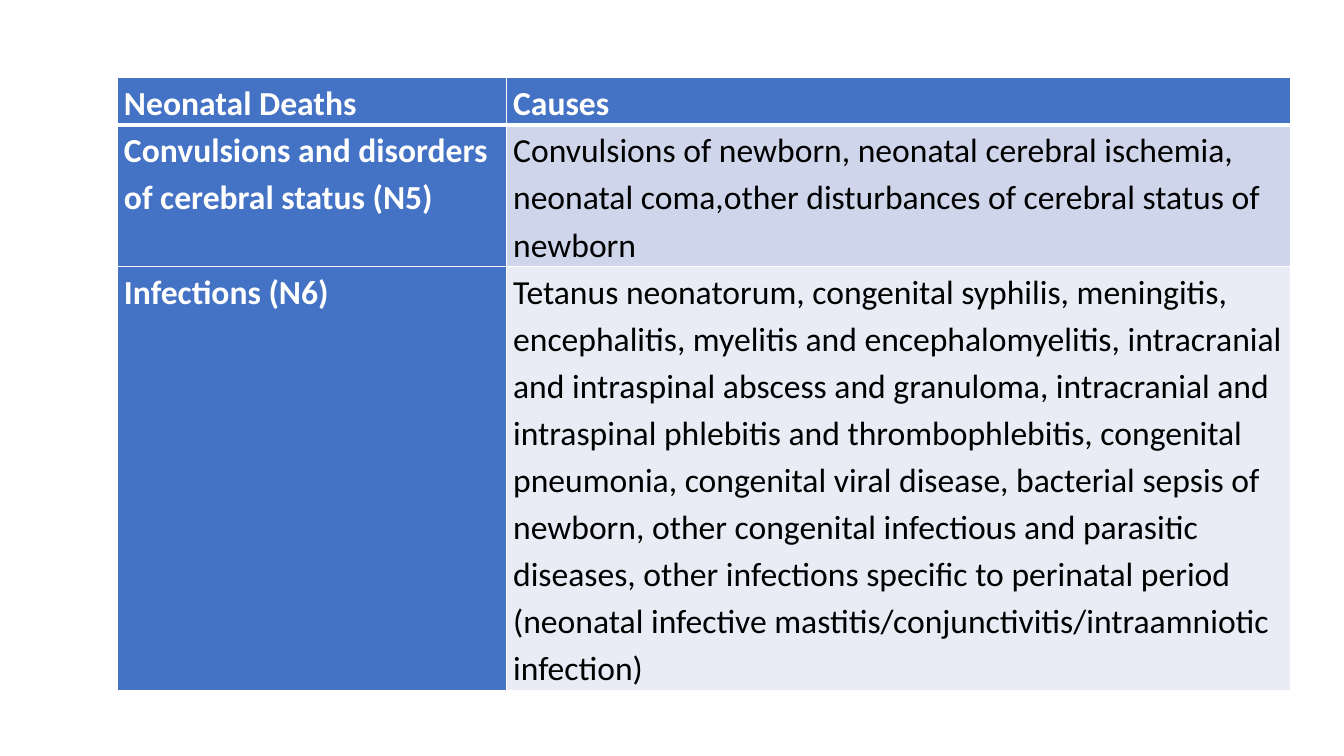
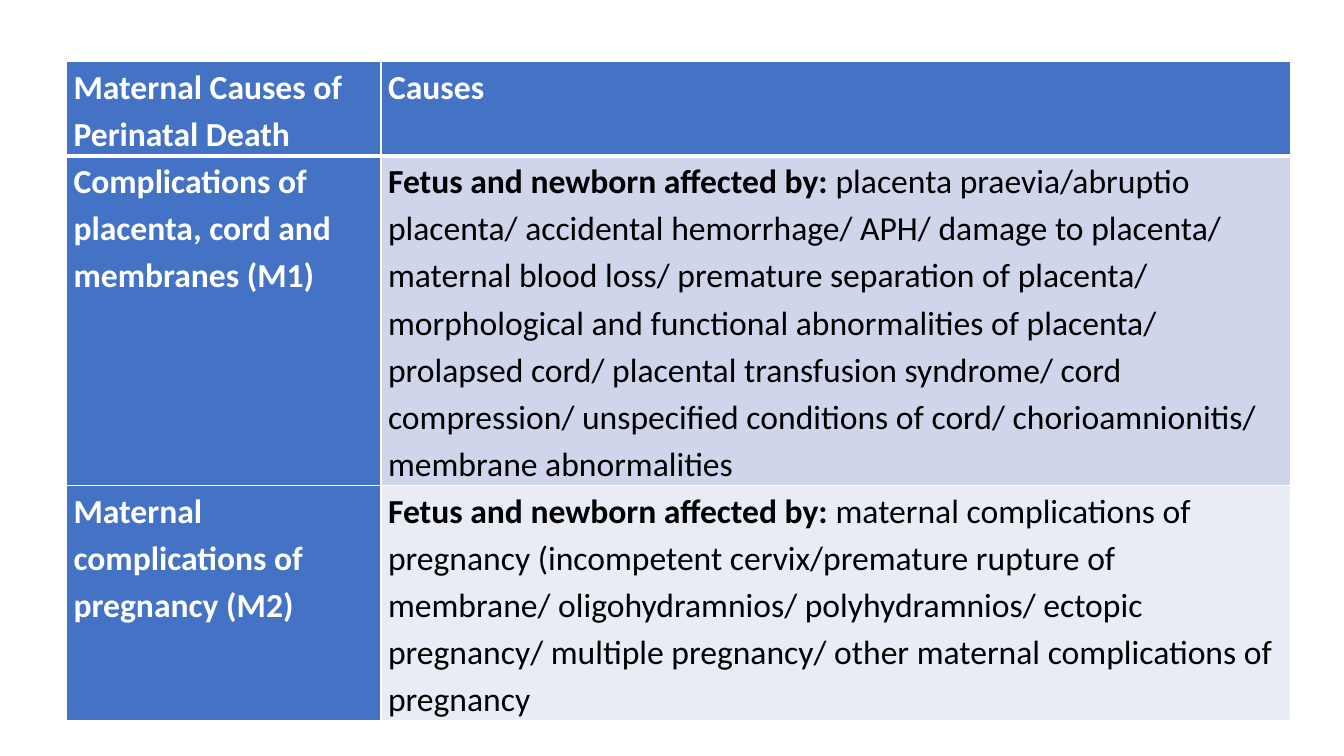
from lxml.etree import SubElement
from pptx import Presentation
from pptx.dml.color import RGBColor
from pptx.oxml.ns import qn
from pptx.util import Inches, Pt

# Content: each cell is a list of (text, bold) runs
AFFECTED = ("Fetus and newborn affected by: ", True)
CAUSE_TABLES = [
    {
        "left": 1.16, "top": 0.77, "group_width": 3.86, "row_lines": (1, 3, 9),
        "rows": [
            ([("Neonatal Deaths", True)], [("Causes", True)]),
            ([("Convulsions and disorders of cerebral status (N5)", True)],
             [("Convulsions of newborn, neonatal cerebral ischemia, neonatal "
               "coma,other disturbances of cerebral status of newborn", False)]),
            ([("Infections (N6)", True)],
             [("Tetanus neonatorum, congenital syphilis, meningitis, encephalitis, "
               "myelitis and encephalomyelitis, intracranial and intraspinal abscess "
               "and granuloma, intracranial and intraspinal phlebitis and "
               "thrombophlebitis, congenital pneumonia, congenital viral disease, "
               "bacterial sepsis of newborn, other congenital infectious and parasitic "
               "diseases, other infections specific to perinatal period (neonatal "
               "infective mastitis/conjunctivitis/intraamniotic infection)", False)]),
        ],
    },
    {
        "left": 0.66, "top": 0.61, "group_width": 3.12, "row_lines": (2, 7, 5),
        "rows": [
            ([("Maternal Causes of Perinatal Death", True)], [("Causes", True)]),
            ([("Complications of placenta, cord and membranes (M1)", True)],
             [AFFECTED,
              ("placenta praevia/abruptio placenta/ accidental hemorrhage/ APH/ damage "
               "to placenta/ maternal blood loss/ premature separation of placenta/ "
               "morphological and functional abnormalities of placenta/ prolapsed cord/ "
               "placental transfusion syndrome/ cord compression/ unspecified conditions "
               "of cord/ chorioamnionitis/ membrane abnormalities", False)]),
            ([("Maternal complications of pregnancy (M2)", True)],
             [AFFECTED,
              ("maternal complications of pregnancy (incompetent cervix/premature "
               "rupture of membrane/ oligohydramnios/ polyhydramnios/ ectopic pregnancy/ "
               "multiple pregnancy/ other maternal complications of pregnancy", False)]),
        ],
    },
]

# Shared style
WHITE, BLACK, BLUE = "FFFFFF", "000000", "4472C4"
BANDS = ("CFD5EA", "E9EBF5")
FONT, TEXT_SIZE, LINE_SPACING = "Calibri", 24, 1.15
RIGHT_EDGE, LINE_HEIGHT, SIDE_MARGIN = 12.8, 0.46, 0.07
THIN, THICK = 1, 3


def color(hex_value):
    return RGBColor.from_string(hex_value)


def add_borders(cell, top, bottom):
    properties = cell._tc.get_or_add_tcPr()
    for side, width in (("L", THIN), ("R", THIN), ("T", top), ("B", bottom)):
        line = SubElement(properties, qn(f"a:ln{side}"), w=str(Pt(width)))
        SubElement(SubElement(line, qn("a:solidFill")), qn("a:srgbClr"), val=WHITE)


def fill_cell(cell, runs, row, column):
    on_blue = row == 0 or column == 0
    add_borders(cell, THICK if row == 1 else THIN, THICK if row == 0 else THIN)
    cell.fill.solid()
    cell.fill.fore_color.rgb = color(BLUE if on_blue else BANDS[(row - 1) % 2])
    cell.margin_left = cell.margin_right = Inches(SIDE_MARGIN)
    cell.margin_top = cell.margin_bottom = 0
    paragraph = cell.text_frame.paragraphs[0]
    paragraph.line_spacing = LINE_SPACING
    for text, bold in runs:
        run = paragraph.add_run()
        run.text = text
        run.font.name, run.font.size, run.font.bold = FONT, Pt(TEXT_SIZE), bold
        run.font.color.rgb = color(WHITE if on_blue else BLACK)


def add_cause_table(slide, left, top, group_width, row_lines, rows):
    widths = (group_width, RIGHT_EDGE - left - group_width)
    table = slide.shapes.add_table(
        len(rows), len(widths), Inches(left), Inches(top),
        Inches(sum(widths)), Inches(sum(row_lines) * LINE_HEIGHT)).table
    table.first_col = True
    for column, width in zip(table.columns, widths):
        column.width = Inches(width)
    for r, (lines, cells) in enumerate(zip(row_lines, rows)):
        table.rows[r].height = Inches(lines * LINE_HEIGHT)
        for c, runs in enumerate(cells):
            fill_cell(table.cell(r, c), runs, r, c)


def main():
    deck = Presentation()
    deck.slide_width, deck.slide_height = Inches(13.33), Inches(7.5)
    blank = deck.slide_layouts[6]
    for cause_table in CAUSE_TABLES:
        add_cause_table(deck.slides.add_slide(blank), **cause_table)
    deck.save("out.pptx")


if __name__ == "__main__":
    main()
